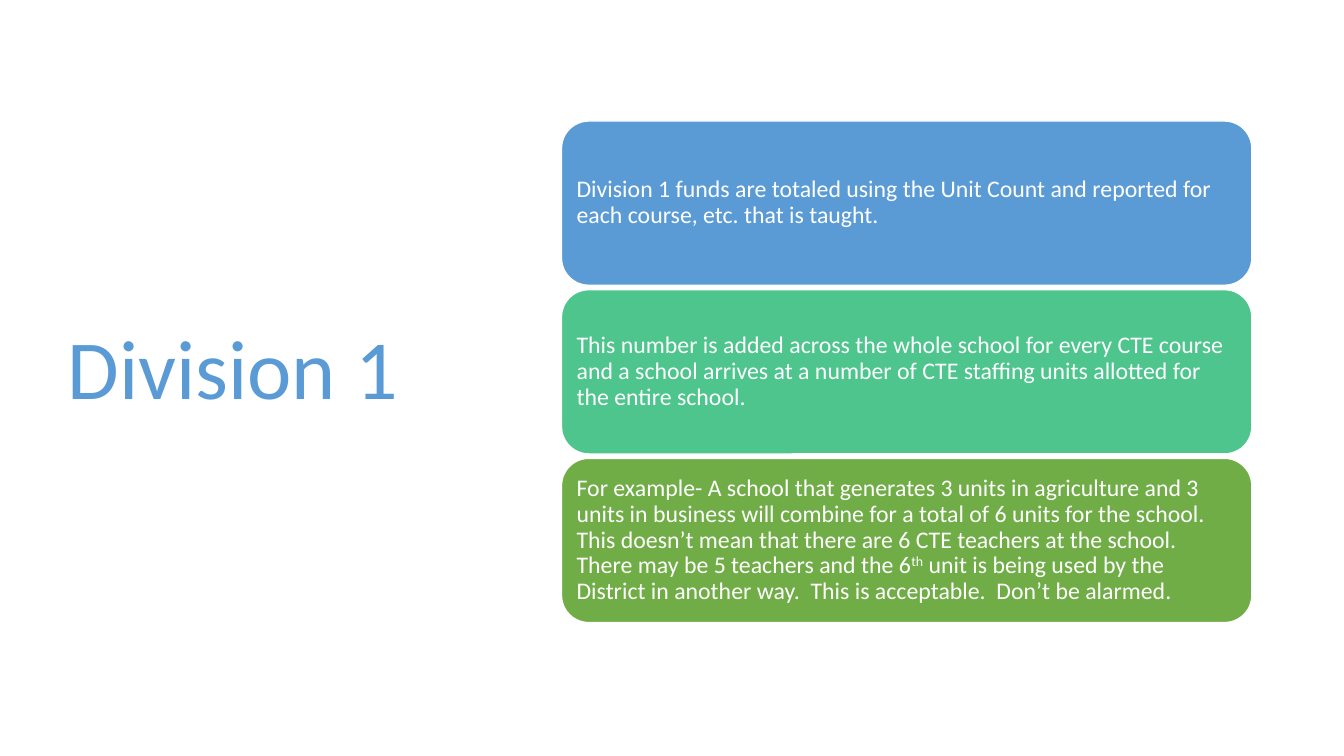
from dataclasses import dataclass

from pptx import Presentation
from pptx.dml.color import RGBColor
from pptx.enum.shapes import MSO_SHAPE
from pptx.enum.text import MSO_ANCHOR, MSO_AUTO_SIZE, PP_ALIGN
from pptx.slide import Slide
from pptx.text.text import TextFrame
from pptx.util import Cm, Pt

BLUE, GREEN, OLIVE, WHITE = "5B9BD5", "4DC58D", "70AD47", "FFFFFF"
CARD_LEFT, CARD_TOP = 14.15, 3.05
CARD_WIDTH, CARD_HEIGHT = 17.4, 4.14
CARD_PITCH = 4.25
CARD_INSET = Cm(0.18)


@dataclass(frozen=True)
class Piece:
    text: str
    superscript: bool = False


@dataclass(frozen=True)
class Card:
    color: str
    pieces: tuple[Piece, ...]


CARDS = (
    Card(BLUE, (
        Piece("Division 1 funds are totaled using the Unit Count and reported "
              "for each course, etc. that is taught."),
    )),
    Card(GREEN, (
        Piece("This number is added across the whole school for every CTE "
              "course and a school arrives at a number of CTE staffing units "
              "allotted for the entire school."),
    )),
    Card(OLIVE, (
        Piece("For example- A school that generates 3 units in agriculture and "
              "3 units in business will combine for a total of 6 units for the "
              "school.  This doesn’t mean that there are 6 CTE teachers at the "
              "school.  There may be 5 teachers and the 6"),
        Piece("th", superscript=True),
        Piece(" unit is being used by the District in another way.  This is "
              "acceptable.  Don’t be alarmed."),
    )),
)


def rgb(color: str) -> RGBColor:
    return RGBColor.from_string(color)


def apply_format(target: object, values: dict[str, object]) -> None:
    for name, value in values.items():
        setattr(target, name, value)


def write_text(frame: TextFrame, pieces: tuple[Piece, ...], size: float,
               color: str) -> None:
    """Fill the frame with one left-aligned, vertically centred paragraph."""
    apply_format(frame, {
        "word_wrap": True,
        "auto_size": MSO_AUTO_SIZE.NONE,
        "vertical_anchor": MSO_ANCHOR.MIDDLE,
    })
    paragraph = frame.paragraphs[0]
    apply_format(paragraph, {"alignment": PP_ALIGN.LEFT, "line_spacing": 0.9})
    for piece in pieces:
        run = paragraph.add_run()
        run.text = piece.text
        apply_format(run.font, {"name": "Calibri", "size": Pt(size)})
        run.font.color.rgb = rgb(color)
        if piece.superscript:
            run._r.get_or_add_rPr().set("baseline", "30000")


def add_title(slide: Slide) -> None:
    title = slide.shapes.title
    apply_format(title, {
        "left": Cm(1.45), "top": Cm(1.73),
        "width": Cm(10.57), "height": Cm(15.29),
    })
    write_text(title.text_frame, (Piece("Division 1"),), 60, BLUE)


def add_card(slide: Slide, card: Card, top: float) -> None:
    shape = slide.shapes.add_shape(
        MSO_SHAPE.ROUNDED_RECTANGLE,
        Cm(CARD_LEFT), Cm(top), Cm(CARD_WIDTH), Cm(CARD_HEIGHT))
    shape.shadow.inherit = False
    shape.fill.solid()
    shape.fill.fore_color.rgb = rgb(card.color)
    shape.line.color.rgb = rgb(WHITE)
    shape.line.width = Pt(1)
    apply_format(shape.text_frame, {
        f"margin_{side}": CARD_INSET
        for side in ("left", "top", "right", "bottom")
    })
    write_text(shape.text_frame, card.pieces, 17, WHITE)


def main() -> None:
    presentation = Presentation()
    apply_format(presentation, {
        "slide_width": Cm(33.87), "slide_height": Cm(19.05),
    })
    title_only = presentation.slide_layouts.get_by_name("Title Only")
    slide = presentation.slides.add_slide(title_only)
    add_title(slide)
    for index, card in enumerate(CARDS):
        add_card(slide, card, CARD_TOP + index * CARD_PITCH)
    presentation.save("out.pptx")


if __name__ == "__main__":
    main()
